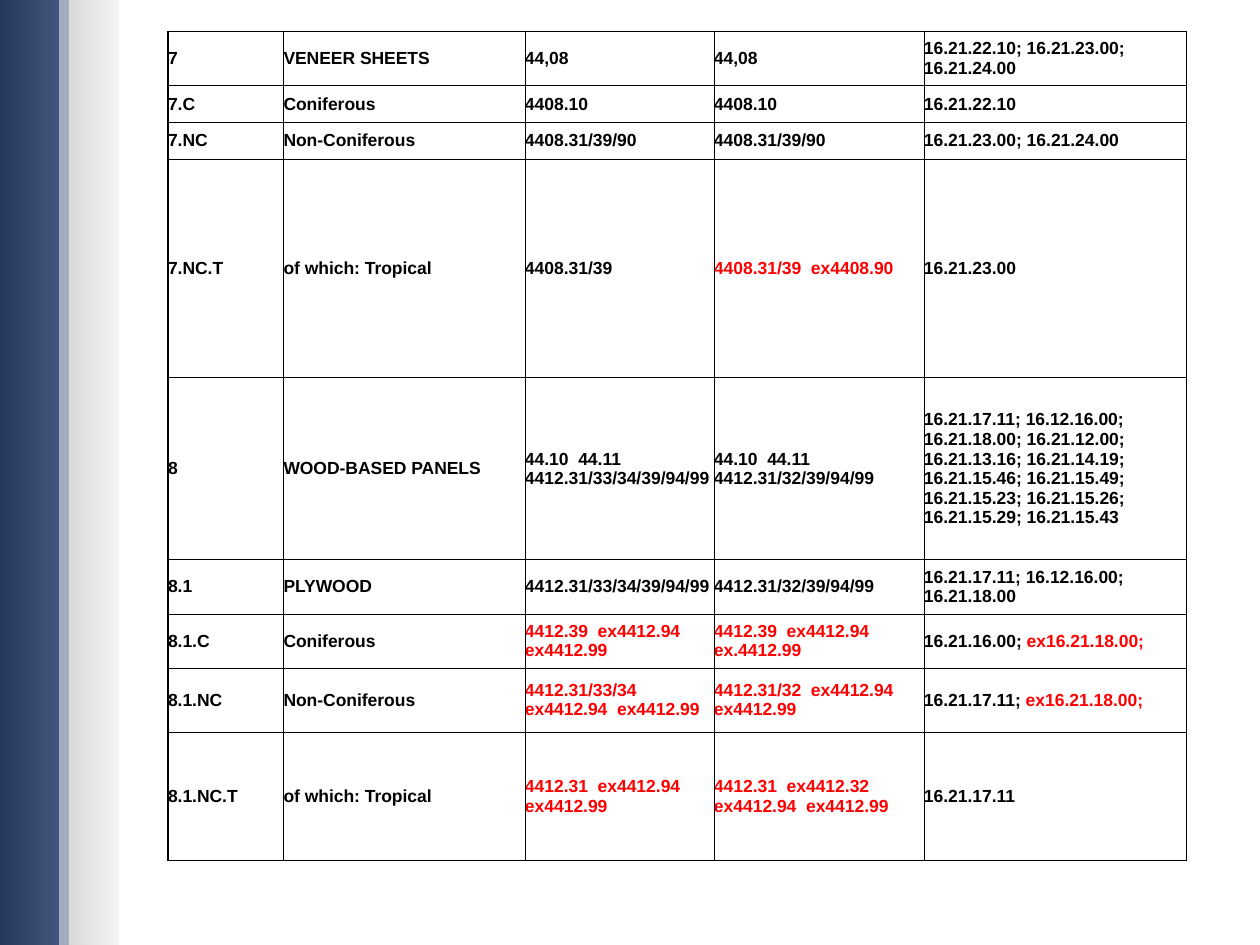
from lxml.etree import SubElement
from pptx import Presentation
from pptx.dml.color import RGBColor
from pptx.enum.shapes import MSO_SHAPE as Shape
from pptx.enum.text import MSO_ANCHOR as Anchor
from pptx.oxml import parse_xml
from pptx.oxml.ns import nsdecls, qn
from pptx.util import Pt

BLACK, RED = "000000", "FF0000"
COLUMN_WIDTHS = [66, 138, 108, 120, 150]
ROW_HEIGHTS = [31, 21, 21, 125, 104, 31, 31, 36.5, 73.5]
SIDE_BARS = [
    (0, 39.6, [("344974", 90), ("26385C", 100)]),
    (39.6, 28, [("F2F2F2", 80), ("D9D9D9", 100)]),
    (33.8, 5.8, [("FFFFFF", 50)]),
]
PRODUCT_ROWS = [
    ["7", "VENEER SHEETS", "44,08", "44,08", "16.21.22.10; 16.21.23.00; 16.21.24.00"],
    ["7.C", "Coniferous", "4408.10", "4408.10", "16.21.22.10"],
    ["7.NC", "Non-Coniferous", "4408.31/39/90", "4408.31/39/90", "16.21.23.00; 16.21.24.00"],
    ["7.NC.T", "of which: Tropical", "4408.31/39", "|4408.31/39  ex4408.90", "16.21.23.00"],
    ["8", "WOOD-BASED PANELS", "44.10  44.11  4412.31/33/34/39/94/99",
     "44.10  44.11  4412.31/32/39/94/99",
     "16.21.17.11; 16.12.16.00; 16.21.18.00; 16.21.12.00; 16.21.13.16; 16.21.14.19; "
     "16.21.15.46; 16.21.15.49; 16.21.15.23; 16.21.15.26; 16.21.15.29; 16.21.15.43"],
    ["8.1", "PLYWOOD", "4412.31/33/34/39/94/99", "4412.31/32/39/94/99",
     "16.21.17.11; 16.12.16.00; 16.21.18.00"],
    ["8.1.C", "Coniferous", "|4412.39  ex4412.94  ex4412.99",
     "|4412.39  ex4412.94  ex.4412.99", "16.21.16.00;| ex16.21.18.00;"],
    ["8.1.NC", "Non-Coniferous", "|4412.31/33/34  ex4412.94  ex4412.99",
     "|4412.31/32  ex4412.94  ex4412.99", "16.21.17.11;| ex16.21.18.00;"],
    ["8.1.NC.T", "of which: Tropical", "|4412.31  ex4412.94  ex4412.99",
     "|4412.31  ex4412.32  ex4412.94  ex4412.99", "16.21.17.11"],
]


def paint(color, hex_value):
    """Set a colour format to a hex colour."""
    color.rgb = RGBColor.from_string(hex_value)


def add_side_bar(slide, left, top, width, height, stops):
    """Draw one translucent bar, solid or fading from right to left."""
    bar = slide.shapes.add_shape(Shape.RECTANGLE, Pt(left), Pt(top), Pt(width), Pt(height))
    bar.shadow.inherit = False
    bar.line.fill.background()
    if len(stops) == 1:
        bar.fill.solid()
        paint(bar.fill.fore_color, stops[0][0])
    else:
        bar.fill.gradient()
        bar.fill.gradient_angle = 180
        for stop, (hex_value, _) in zip(bar.fill.gradient_stops, stops):
            paint(stop.color, hex_value)
    colors = bar.element.spPr.iter(qn("a:srgbClr"))
    for color, (_, opacity) in zip(colors, stops):
        SubElement(color, qn("a:alpha"), val=str(opacity * 1000))


def set_borders(cell, widths):
    """Give a cell black left, right, top and bottom borders."""
    properties = cell._tc.get_or_add_tcPr()
    for index, (side, width) in enumerate(zip("LRTB", widths)):
        border = parse_xml(
            f'<a:ln{side} {nsdecls("a")} w="{Pt(width)}"><a:solidFill>'
            f'<a:srgbClr val="{BLACK}"/></a:solidFill></a:ln{side}>')
        properties.insert(index, border)


def fill_cell(cell, text):
    """Write a cell, with the part after a bar in red."""
    cell.fill.background()
    cell.vertical_anchor = Anchor.MIDDLE
    cell.margin_left = cell.margin_right = cell.margin_top = cell.margin_bottom = 0
    paragraph = cell.text_frame.paragraphs[0]
    paragraph.font.name = "Arial"
    paragraph.font.size = Pt(10)
    paragraph.font.bold = True
    for part, hex_value in zip(text.split("|"), (BLACK, RED)):
        if part:
            run = paragraph.add_run()
            run.text = part
            paint(run.font.color, hex_value)


def add_product_table(slide, left, top, width, height):
    """Build the product code table with a heavier outer frame."""
    last_row, last_column = len(ROW_HEIGHTS) - 1, len(COLUMN_WIDTHS) - 1
    table = slide.shapes.add_table(
        last_row + 1, last_column + 1, Pt(left), Pt(top), Pt(width), Pt(height)).table
    table.first_row = table.horz_banding = False
    for column, column_width in zip(table.columns, COLUMN_WIDTHS):
        column.width = Pt(column_width)
    for row, row_height in zip(table.rows, ROW_HEIGHTS):
        row.height = Pt(row_height)
    for row_index, texts in enumerate(PRODUCT_ROWS):
        for column_index, text in enumerate(texts):
            cell = table.cell(row_index, column_index)
            fill_cell(cell, text)
            outer_sides = (column_index == 0, column_index == last_column,
                           row_index == 0, row_index == last_row)
            set_borders(cell, [1 if outer else 0.5 for outer in outer_sides])


def main():
    """Build and save the slide."""
    presentation = Presentation()
    presentation.slide_width, presentation.slide_height = Pt(720), Pt(540)
    slide = presentation.slides.add_slide(presentation.slide_layouts[6])
    for left, width, stops in SIDE_BARS:
        add_side_bar(slide, left, 0, width, 540, stops)
    add_product_table(slide, 96, 18, sum(COLUMN_WIDTHS), sum(ROW_HEIGHTS))
    presentation.save("out.pptx")


if __name__ == "__main__":
    main()
